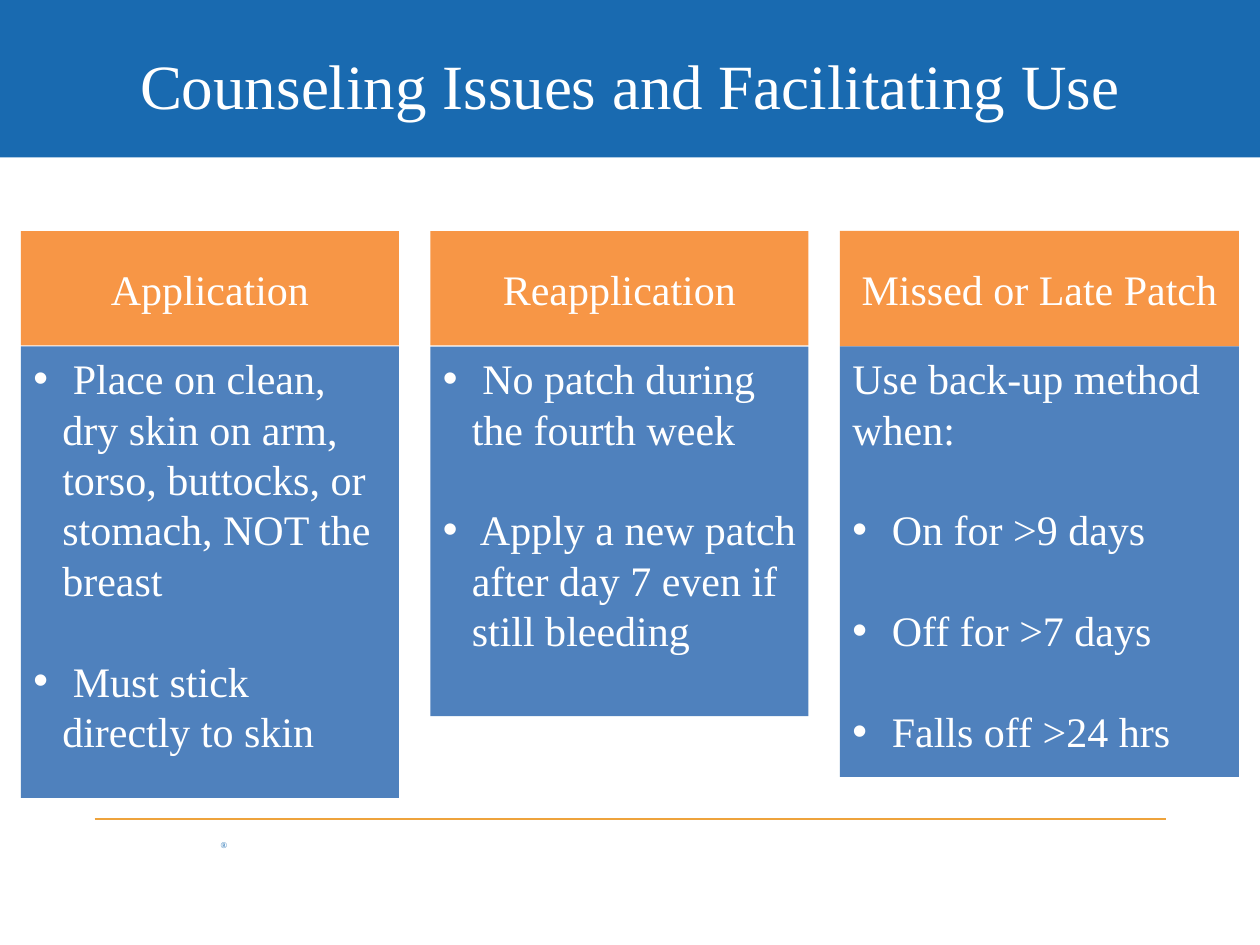
from typing import NamedTuple

from lxml import etree
from pptx import Presentation
from pptx.dml.color import RGBColor
from pptx.enum.shapes import MSO_CONNECTOR, MSO_SHAPE
from pptx.enum.text import MSO_ANCHOR, PP_ALIGN
from pptx.oxml.ns import qn
from pptx.util import Inches, Pt

RECT, LINE = MSO_SHAPE.RECTANGLE, MSO_CONNECTOR.STRAIGHT
TOP, MIDDLE = MSO_ANCHOR.TOP, MSO_ANCHOR.MIDDLE
LEFT, CENTER = PP_ALIGN.LEFT, PP_ALIGN.CENTER
FONT = "Times New Roman"
BLUE, STEEL, ORANGE, GOLD, WHITE = "196AB0", "4F81BD", "F79646", "EEA33C", "FFFFFF"

# The slide is a grid of 60 columns and 45 rows.
WIDE, HIGH = 10, 7.5
COLS, ROWS = 60, 45
HEAD_TOP, BODY_TOP = 11, 16.5
HANG = Inches(0.23)
GAP = Pt(28.8)


class Box(NamedTuple):
    col: float
    row: float
    cols: float
    rows: float


class Item(NamedTuple):
    text: str
    bullet: bool = True


class Panel(NamedTuple):
    title: str
    col: float
    cols: float
    head: float
    body: float
    items: list[Item]


PANELS = [
    Panel("Application", 1, 18, 5.45, 21.5, [
        Item(" Place on clean, dry skin on arm, torso, buttocks, or stomach, NOT the breast"),
        Item(" Must stick directly to skin"),
    ]),
    Panel("Reapplication", 20.5, 18, 5.45, 17.6, [
        Item(" No patch during the fourth week"),
        Item(" Apply a new patch after day 7 even if still bleeding"),
    ]),
    Panel("Missed or Late Patch", 40, 19, 5.5, 20.5, [
        Item("Use back-up method when:", False),
        Item(" On for >9 days"),
        Item(" Off for >7 days"),
        Item(" Falls off >24 hrs"),
    ]),
]


def across(col: float) -> int:
    return Inches(WIDE * col / COLS)


def down(row: float) -> int:
    return Inches(HIGH * row / ROWS)


def place(box: Box) -> tuple[int, int, int, int]:
    return across(box.col), down(box.row), across(box.cols), down(box.rows)


def color(code: str) -> RGBColor:
    return RGBColor.from_string(code)


def add_bullet(para) -> None:
    props = para._p.get_or_add_pPr()
    props.set("marL", str(HANG))
    props.set("indent", str(-HANG))
    etree.SubElement(props, qn("a:buFont")).set("typeface", "Arial")
    etree.SubElement(props, qn("a:buChar")).set("char", "•")


def write(shape, items: list[Item], size: float, tint: str = WHITE,
          align=CENTER, anchor=MIDDLE, inset: bool = True) -> None:
    frame = shape.text_frame
    form = {"word_wrap": True, "vertical_anchor": anchor}
    if not inset:
        form |= {f"margin_{side}": 0 for side in ("left", "top", "right", "bottom")}
    for key, value in form.items():
        setattr(frame, key, value)
    for rank, item in enumerate(items):
        para = frame.add_paragraph() if rank else frame.paragraphs[0]
        para.alignment = align
        if rank:
            para.space_before = GAP
        if item.bullet:
            add_bullet(para)
        run = para.add_run()
        run.text = item.text
        for key, value in {"name": FONT, "size": Pt(size)}.items():
            setattr(run.font, key, value)
        run.font.color.rgb = color(tint)


def add_block(slide, box: Box, fill: str):
    block = slide.shapes.add_shape(RECT, *place(box))
    block.shadow.inherit = False
    block.fill.solid()
    block.fill.fore_color.rgb = color(fill)
    block.line.fill.background()
    return block


def add_label(slide, box: Box, text: str, size: float, tint: str, **form) -> None:
    label = slide.shapes.add_textbox(*place(box))
    write(label, [Item(text, False)], size, tint, **form)


def add_rule(slide, start: float, end: float, row: float) -> None:
    rule = slide.shapes.add_connector(LINE, across(start), down(row), across(end), down(row))
    rule.line.color.rgb = color(GOLD)
    rule.line.width = Pt(0.75)
    etree.SubElement(rule._element.spPr, qn("a:effectLst"))


def add_panel(slide, panel: Panel) -> None:
    head = add_block(slide, Box(panel.col, HEAD_TOP, panel.cols, panel.head), ORANGE)
    write(head, [Item(panel.title, False)], 24)
    body = add_block(slide, Box(panel.col, BODY_TOP, panel.cols, panel.body), STEEL)
    write(body, panel.items, 24, align=LEFT, anchor=TOP)


def main() -> None:
    deck = Presentation()
    deck.slide_width, deck.slide_height = Inches(WIDE), Inches(HIGH)
    slide = deck.slides.add_slide(deck.slide_layouts[6])
    add_block(slide, Box(0, 0, COLS, 7.5), BLUE)
    add_label(slide, Box(10.5, 40, 1.5, 0.5), "®", 5, BLUE,
              align=LEFT, anchor=TOP, inset=False)
    add_rule(slide, 4.5, 55.5, 39)
    add_label(slide, Box(3, 1, 54, 6), "Counseling Issues and Facilitating Use", 36, WHITE)
    for panel in PANELS:
        add_panel(slide, panel)
    deck.save("out.pptx")


if __name__ == "__main__":
    main()
